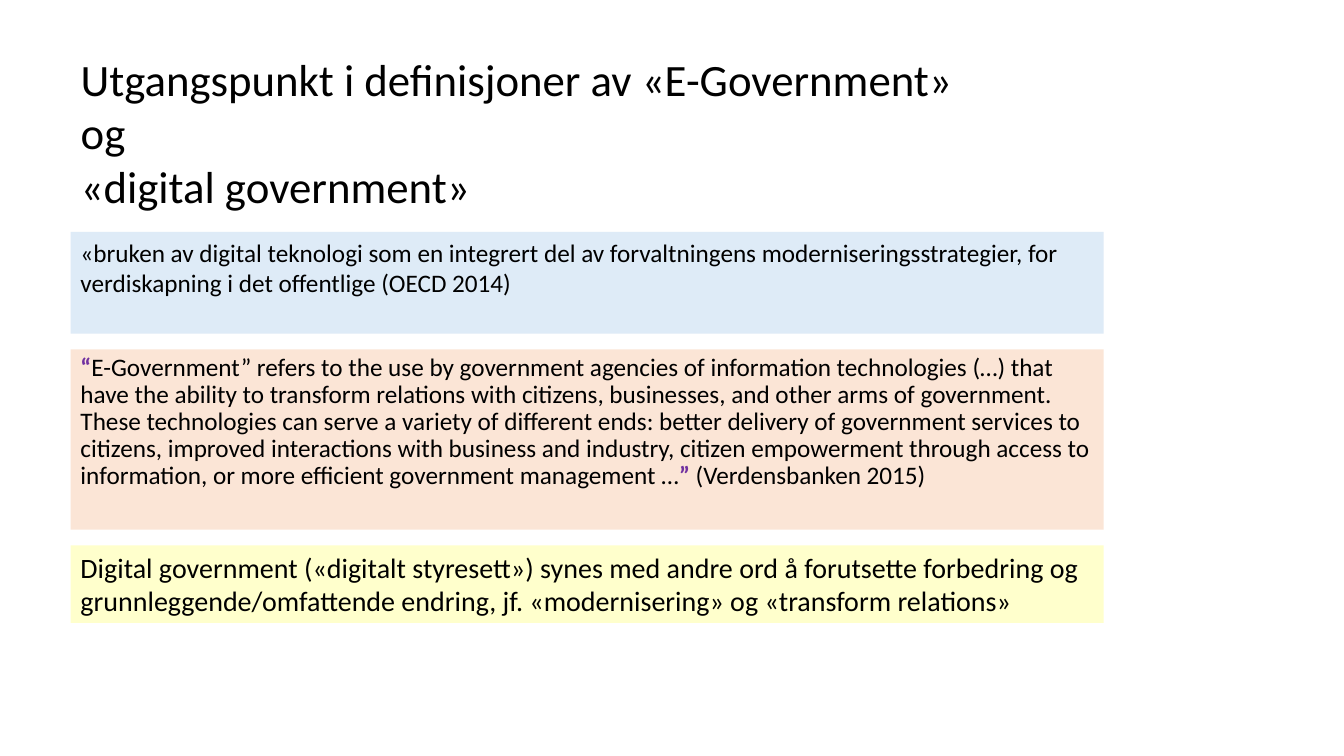
from pptx import Presentation
from pptx.dml.color import RGBColor
from pptx.enum.shapes import MSO_SHAPE
from pptx.enum.text import MSO_ANCHOR, PP_ALIGN
from pptx.util import Pt

RECT = MSO_SHAPE.RECTANGLE
TOP = MSO_ANCHOR.TOP
LEFT = PP_ALIGN.LEFT

FONT = "Calibri"
BLACK, PURPLE = "000000", "7030A0"

# Each paragraph is a list of runs: (text, colour, bold)
TITLE = [
    [("Utgangspunkt i definisjoner av «E-Government» og", BLACK, False)],
    [("«digital government»", BLACK, False)],
]
OECD = [
    [("«bruken av digital teknologi som en integrert del av forvaltningens "
      "moderniseringsstrategier, for", BLACK, False)],
    [("verdiskapning i det offentlige (OECD 2014)", BLACK, False)],
]
BANK = [[
    ("“", PURPLE, True),
    ("E-Government” refers to the use by government agencies of information "
     "technologies (…) that have the ability to transform relations with "
     "citizens, businesses, and other arms of government. These technologies "
     "can serve a variety of different ends: better delivery of government "
     "services to citizens, improved interactions with business and industry, "
     "citizen empowerment through access to information, or more efficient "
     "government management …", BLACK, False),
    ("”", PURPLE, True),
    (" (Verdensbanken 2015)", BLACK, False),
]]
SUM = [[
    ("Digital government («digitalt styresett») synes med andre ord å "
     "forutsette forbedring og grunnleggende/omfattende endring, jf. "
     "«modernisering» og «transform relations»", BLACK, False),
]]
# Fill, height, text size, line spacing, text
PANELS = [
    ("DEEBF7", 72.7, 18, 1.0, OECD),
    ("FBE5D6", 128.9, 18, 0.9, BANK),
    ("FFFFCC", 55.4, 20, 1.0, SUM),
]
EDGE, WIDE, START, GAP = 50.4, 738, 165.6, 11.2


def color(code):
    return RGBColor.from_string(code)


def write(shape, paras, size, lead):
    frame = shape.text_frame
    frame.word_wrap = True
    frame.vertical_anchor = TOP
    for i, runs in enumerate(paras):
        para = frame.add_paragraph() if i else frame.paragraphs[0]
        para.alignment = LEFT
        para.line_spacing = lead
        para.space_before = Pt(0)
        for text, tint, bold in runs:
            run = para.add_run()
            run.text = text
            run.font.name = FONT
            run.font.size = Pt(size)
            run.font.bold = bold
            run.font.color.rgb = color(tint)


def main():
    deck = Presentation()
    deck.slide_width, deck.slide_height = Pt(960), Pt(540)
    slide = deck.slides.add_slide(deck.slide_layouts[5])

    title = slide.shapes.title
    title.left, title.top = Pt(EDGE), Pt(33.1)
    title.width, title.height = Pt(655), Pt(125)
    write(title, TITLE, 32, 1.0)

    top = START
    for fill, high, size, lead, paras in PANELS:
        panel = slide.shapes.add_shape(
            RECT, Pt(EDGE), Pt(top), Pt(WIDE), Pt(high))
        panel.shadow.inherit = False
        panel.fill.solid()
        panel.fill.fore_color.rgb = color(fill)
        panel.line.fill.background()
        write(panel, paras, size, lead)
        top += high + GAP

    deck.save("out.pptx")


if __name__ == "__main__":
    main()
